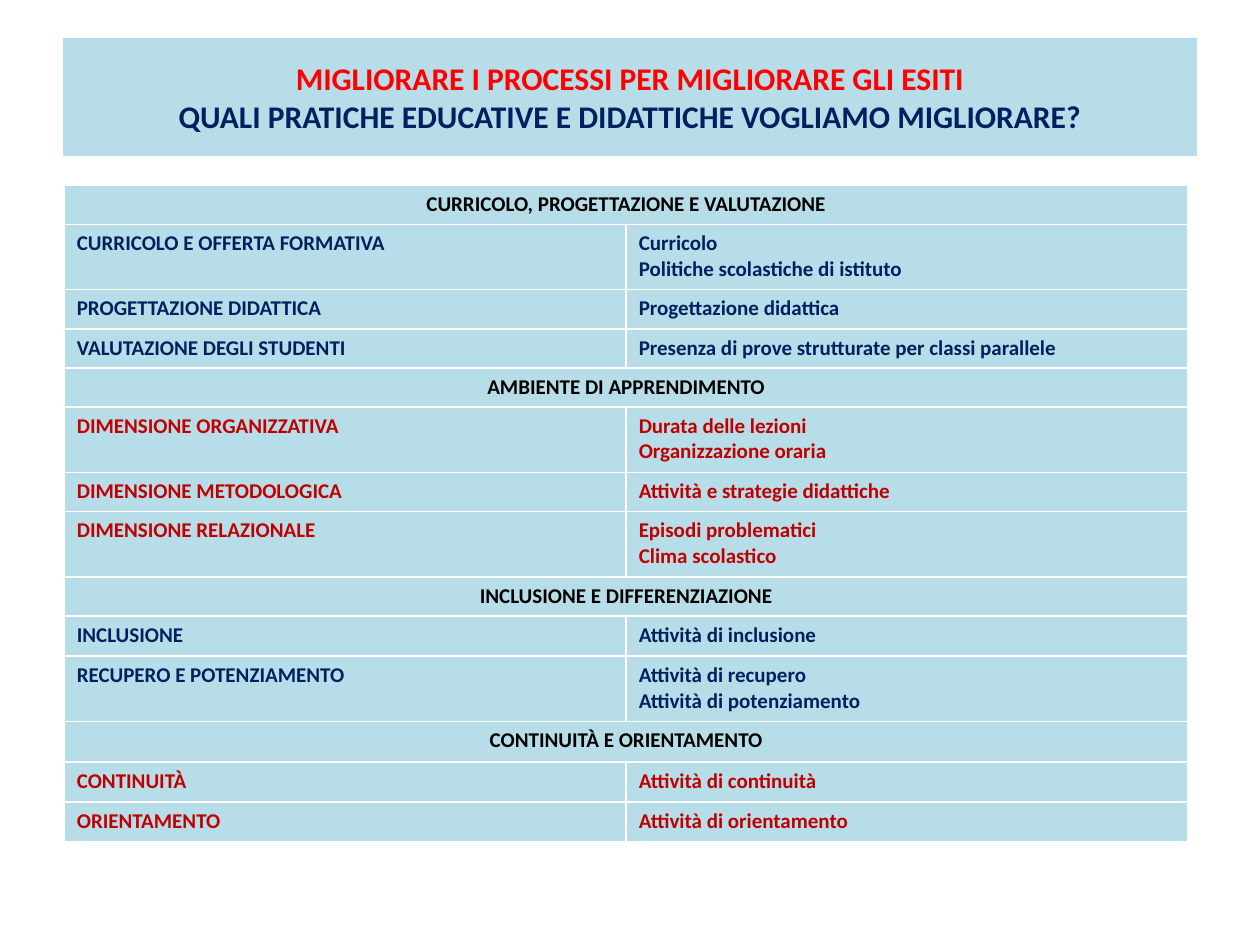
from pptx import Presentation
from pptx.dml.color import RGBColor
from pptx.enum.text import MSO_ANCHOR, MSO_AUTO_SIZE, PP_ALIGN
from pptx.util import Inches, Pt

HUES = {
    "pale": "B7DEE8",
    "red": "FF0000",
    "navy": "002060",
    "wine": "C00000",
    "black": "000000",
}

# Each area: heading, text colour, rows of practice and its indicators
AREAS = [
    ("CURRICOLO, PROGETTAZIONE E VALUTAZIONE", "navy", [
        ("CURRICOLO E OFFERTA FORMATIVA",
         ["Curricolo", "Politiche scolastiche di istituto"]),
        ("PROGETTAZIONE DIDATTICA", ["Progettazione didattica"]),
        ("VALUTAZIONE DEGLI STUDENTI",
         ["Presenza di prove strutturate per classi parallele"]),
    ]),
    ("AMBIENTE DI APPRENDIMENTO", "wine", [
        ("DIMENSIONE ORGANIZZATIVA",
         ["Durata delle lezioni", "Organizzazione oraria"]),
        ("DIMENSIONE METODOLOGICA", ["Attività e strategie didattiche"]),
        ("DIMENSIONE RELAZIONALE",
         ["Episodi problematici", "Clima scolastico"]),
    ]),
    ("INCLUSIONE E DIFFERENZIAZIONE", "navy", [
        ("INCLUSIONE", ["Attività di inclusione"]),
        ("RECUPERO E POTENZIAMENTO",
         ["Attività di recupero", "Attività di potenziamento"]),
    ]),
    ("CONTINUITÀ E ORIENTAMENTO", "wine", [
        ("CONTINUITÀ", ["Attività di continuità"]),
        ("ORIENTAMENTO", ["Attività di orientamento"]),
    ]),
]
HEIGHTS = [0.31, 0.52, 0.31, 0.31, 0.31, 0.52, 0.31,
           0.52, 0.31, 0.32, 0.52, 0.32, 0.32, 0.31]


def paint(item, hue):
    item.fill.solid()
    item.fill.fore_color.rgb = RGBColor.from_string(HUES[hue])


def write(frame, lines, size=12, hues=("black",), align=PP_ALIGN.LEFT):
    """Put each line in its own paragraph; the last hue serves the rest."""
    for i, line in enumerate(lines):
        par = frame.paragraphs[0] if i == 0 else frame.add_paragraph()
        par.alignment = align
        par.space_before = Pt(0)
        run = par.add_run()
        run.text = line
        font = run.font
        font.name, font.size, font.bold = "Calibri", Pt(size), True
        hue = hues[min(i, len(hues) - 1)]
        font.color.rgb = RGBColor.from_string(HUES[hue])


class Deck:
    def __init__(self):
        self.show = Presentation()
        self.show.slide_width = Inches(10)
        self.show.slide_height = Inches(7.5)
        self.slide = self.show.slides.add_slide(self.show.slide_layouts[5])

    def title(self, lines, hues):
        box = self.slide.shapes.title
        box.left, box.top = Inches(0.5), Inches(0.3)
        box.width, box.height = Inches(9), Inches(0.94)
        paint(box, "pale")
        frame = box.text_frame
        frame.word_wrap = True
        frame.auto_size = MSO_AUTO_SIZE.NONE
        frame.vertical_anchor = MSO_ANCHOR.MIDDLE
        write(frame, lines, size=18, hues=hues, align=PP_ALIGN.CENTER)

    def table(self, areas, heights):
        # The default style supplies the white rules between cells
        grid = self.slide.shapes.add_table(
            len(heights), 2, Inches(0.51), Inches(1.47),
            Inches(8.92), Inches(sum(heights))).table
        for row, height in zip(grid.rows, heights):
            row.height = Inches(height)
            for cell in row.cells:
                paint(cell, "pale")
        at = 0
        for head, hue, rows in areas:
            # Heading across both columns
            cell = grid.cell(at, 0)
            cell.merge(grid.cell(at, 1))
            write(cell.text_frame, [head], align=PP_ALIGN.CENTER)
            # Practices and indicators
            for at, (name, items) in enumerate(rows, at + 1):
                write(grid.cell(at, 0).text_frame, [name], hues=[hue])
                write(grid.cell(at, 1).text_frame, items, hues=[hue])
            at += 1


def main():
    deck = Deck()
    deck.title(["MIGLIORARE I PROCESSI PER MIGLIORARE GLI ESITI",
                "QUALI PRATICHE EDUCATIVE E DIDATTICHE VOGLIAMO MIGLIORARE?"],
               hues=["red", "navy"])
    deck.table(AREAS, HEIGHTS)
    deck.show.save("out.pptx")


if __name__ == "__main__":
    main()
